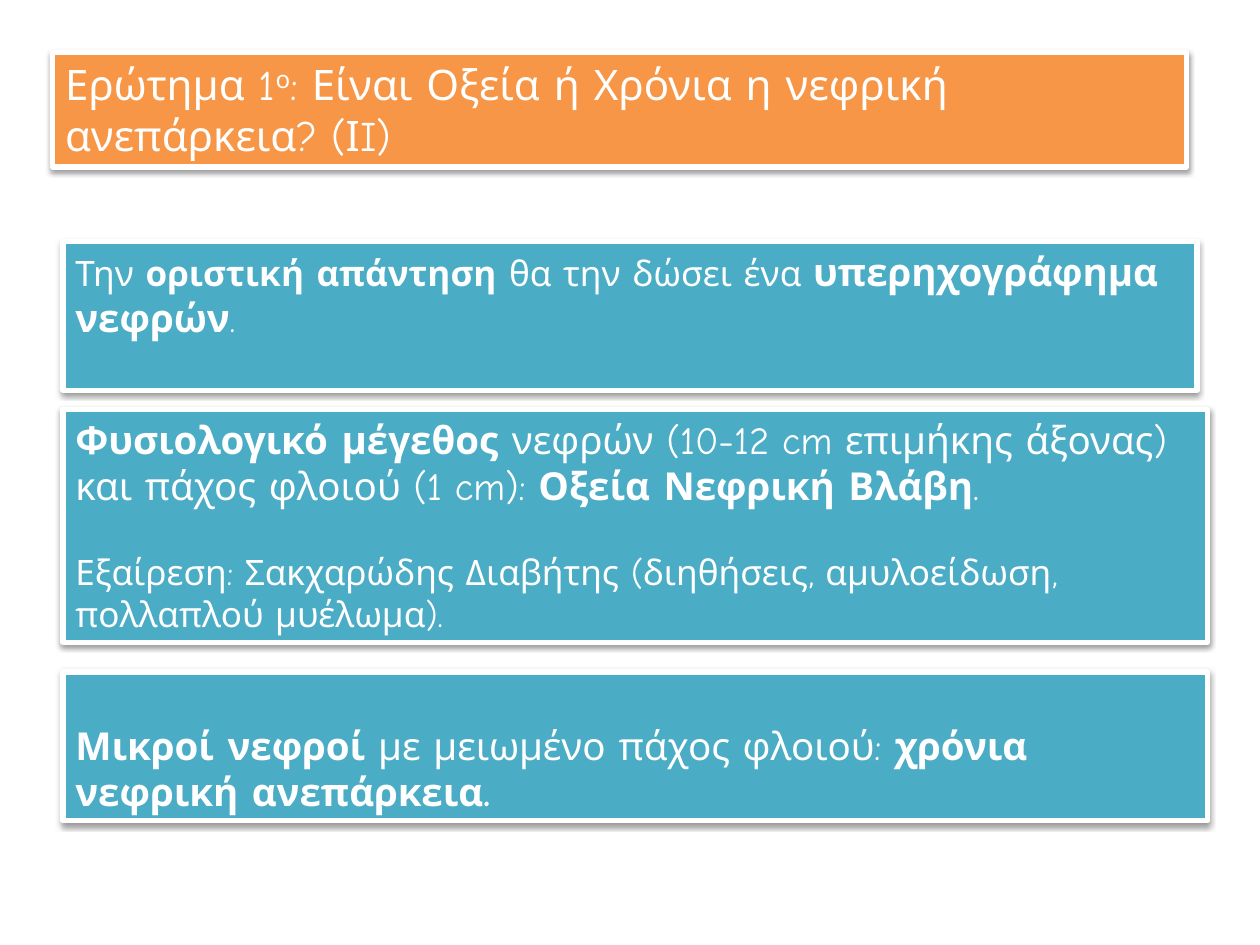
from dataclasses import dataclass

from lxml import etree
from pptx import Presentation
from pptx.dml.color import RGBColor
from pptx.enum.shapes import MSO_SHAPE
from pptx.enum.text import MSO_ANCHOR, MSO_AUTO_SIZE, PP_ALIGN
from pptx.oxml.ns import qn
from pptx.util import Pt

RECT = MSO_SHAPE.RECTANGLE
TOP, BOTTOM = MSO_ANCHOR.TOP, MSO_ANCHOR.BOTTOM
LEFT = PP_ALIGN.LEFT
FIXED = MSO_AUTO_SIZE.NONE

FONT = "Comic Neue"
WHITE, ORANGE, TEAL = "FFFFFF", "F79646", "4BACC6"


@dataclass(frozen=True)
class Span:
    text: str
    bold: bool = False
    size: float | None = None
    raised: bool = False


@dataclass(frozen=True)
class Para:
    size: float
    spans: tuple[Span, ...]
    before: float = 0


@dataclass(frozen=True)
class Panel:
    top: float
    width: float
    height: float
    paras: tuple[Para, ...]
    anchor: MSO_ANCHOR = TOP
    left: float = 36
    fill: str = TEAL


TITLE = Panel(30, 648, 65.4, (
    Para(24, (
        Span("Ερώτημα 1"),
        Span("ο", raised=True),
        Span(": Είναι Οξεία ή Χρόνια η νεφρική ανεπάρκεια? (ΙI)"),
    )),
), left=30, fill=ORANGE)

PANELS = (
    Panel(138, 648, 85, (
        Para(20, (
            Span("Την "),
            Span("οριστική απάντηση ", bold=True),
            Span("θα την δώσει ένα "),
            Span("υπερηχογράφημα νεφρών", bold=True, size=22),
            Span("."),
        )),
    )),
    Panel(234, 654, 133, (
        Para(22, (
            Span("Φυσιολογικό μέγεθος ", bold=True),
            Span("νεφρών (10-12 cm επιμήκης άξονας) και πάχος φλοιού (1 cm): "),
            Span("Οξεία Νεφρική Βλάβη", bold=True),
            Span("."),
        )),
        Para(20, (
            Span("Εξαίρεση: Σακχαρώδης Διαβήτης (διηθήσεις, αμυλοείδωση, "
                 "πολλαπλού μυέλωμα)."),
        ), before=24),
    )),
    Panel(384, 654, 85, (
        Para(22, (
            Span("Μικροί νεφροί", bold=True),
            Span(" με μειωμένο πάχος φλοιού: "),
            Span("χρόνια νεφρική ανεπάρκεια.", bold=True),
        )),
    ), anchor=BOTTOM),
)


def paint(color, code: str) -> None:
    color.rgb = RGBColor.from_string(code)


def add_shadow(shape) -> None:
    shape.shadow.inherit = False
    effects = shape._element.spPr.find(qn("a:effectLst"))
    shadow = etree.SubElement(
        effects, qn("a:outerShdw"), blurRad=str(Pt(3.1)), dist=str(Pt(1.6)),
        dir="5400000", rotWithShape="0")
    black = etree.SubElement(shadow, qn("a:srgbClr"), val="000000")
    etree.SubElement(black, qn("a:alpha"), val="38000")


def write(line, para: Para) -> None:
    line.alignment = LEFT
    line.space_before = Pt(para.before)
    line.font.name = FONT
    line.font.size = Pt(para.size)
    paint(line.font.color, WHITE)
    for span in para.spans:
        run = line.add_run()
        run.text = span.text
        run.font.bold = span.bold
        if span.size:
            run.font.size = Pt(span.size)
        if span.raised:
            run._r.get_or_add_rPr().set("baseline", "30000")


def dress(shape, panel: Panel) -> None:
    """Place the shape, then give it the panel's look and text."""
    shape.left, shape.top = Pt(panel.left), Pt(panel.top)
    shape.width, shape.height = Pt(panel.width), Pt(panel.height)
    shape.fill.solid()
    paint(shape.fill.fore_color, panel.fill)
    shape.line.width = Pt(3)
    paint(shape.line.color, WHITE)
    add_shadow(shape)
    frame = shape.text_frame
    frame.word_wrap = True
    frame.auto_size = FIXED
    frame.vertical_anchor = panel.anchor
    for i, para in enumerate(panel.paras):
        line = frame.add_paragraph() if i else frame.paragraphs[0]
        write(line, para)


def main() -> None:
    deck = Presentation()
    deck.slide_width, deck.slide_height = Pt(720), Pt(540)
    slide = deck.slides.add_slide(deck.slide_layouts.get_by_name("Title Only"))
    dress(slide.shapes.title, TITLE)
    for panel in PANELS:
        dress(slide.shapes.add_shape(RECT, 0, 0, 0, 0), panel)
    deck.save("out.pptx")


if __name__ == "__main__":
    main()
